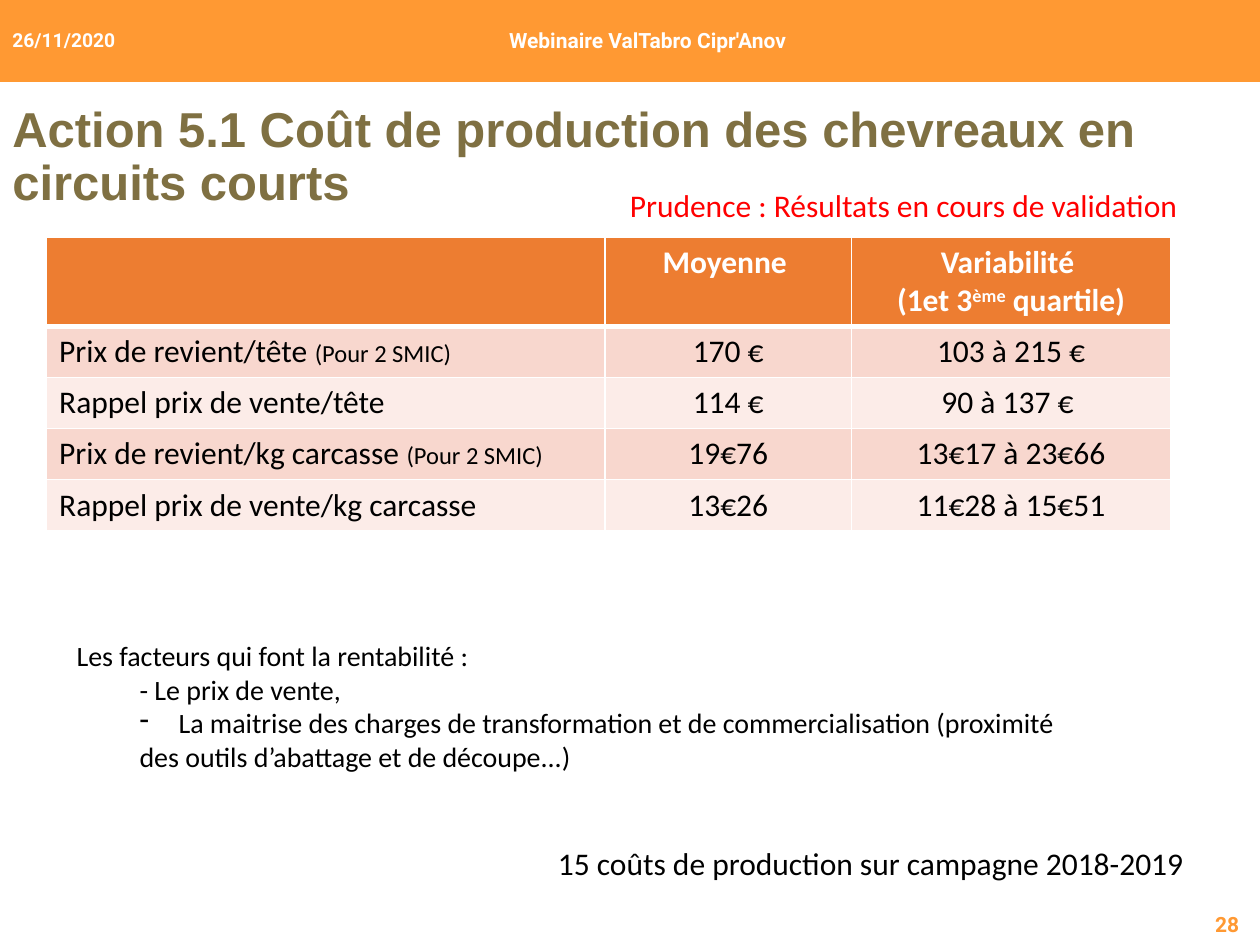
"""Build the slide on the production cost of kids sold through short circuits."""
from dataclasses import dataclass
from typing import Optional

from lxml.etree import SubElement
from pptx import Presentation
from pptx.dml.color import RGBColor
from pptx.enum.shapes import MSO_SHAPE as Shape
from pptx.enum.text import MSO_ANCHOR as Anchor, PP_ALIGN as Align
from pptx.oxml.ns import qn
from pptx.util import Inches, Pt

ORANGE = RGBColor(0xFF, 0x99, 0x33)
OLIVE = RGBColor(0x7F, 0x70, 0x42)
RED = RGBColor(0xFF, 0x00, 0x00)
BLACK = RGBColor(0x00, 0x00, 0x00)
WHITE = RGBColor(0xFF, 0xFF, 0xFF)
HEADER_FILL = RGBColor(0xED, 0x7D, 0x31)
BAND_FILLS = (RGBColor(0xF8, 0xD7, 0xCE), RGBColor(0xFC, 0xEC, 0xE8))


@dataclass(frozen=True)
class Piece:
    text: str
    size: Optional[float] = None
    superscript: bool = False


@dataclass(frozen=True)
class Line:
    pieces: tuple[Piece, ...]
    margin: float = 0
    indent: float = 0
    bullet: str = ""


@dataclass(frozen=True)
class Label:
    box: tuple[float, float, float, float]
    lines: tuple[Line, ...]
    size: float
    color: RGBColor = BLACK
    font: str = "Calibri"
    bold: bool = False
    align: Align = Align.LEFT
    anchor: Anchor = Anchor.TOP
    spacing: float = 1.0


def line(*texts, **layout) -> Line:
    """Make a line from plain strings and pieces."""
    return Line(tuple(Piece(t) if isinstance(t, str) else t for t in texts), **layout)


SMIC = Piece("(Pour 2 SMIC)", size=14)
LABELS = (
    Label((0, 0.53, 10, 1.45),
          (line("Action 5.1 Coût de production des chevreaux en circuits courts"),),
          28, OLIVE, "Arial", True, anchor=Anchor.MIDDLE, spacing=0.9),
    Label((1.37, 0, 7.54, 0.64), (line("Webinaire ValTabro Cipr'Anov"),),
          12, WHITE, "Roboto", True, Align.CENTER, Anchor.MIDDLE),
    Label((9.49, 7.17, 0.5, 0.33), (line("28"),),
          12, ORANGE, "Roboto", True, Align.CENTER, Anchor.MIDDLE),
    Label((0, 0, 1.37, 0.64), (line("26/11/2020"),),
          11, WHITE, "Roboto", True, anchor=Anchor.MIDDLE),
    Label((0.51, 5.02, 9.56, 1.18), (
        line("Les facteurs qui font la rentabilité :"),
        line("- Le prix de vente,", margin=0.5),
        line("La maitrise des charges de transformation et de commercialisation (proximité",
             margin=0.81, indent=-0.31, bullet="-"),
        line("des outils d’abattage et de découpe...)", margin=0.5),
    ), 16),
    Label((4.33, 6.65, 5.26, 0.4),
          (line("15 coûts de production sur campagne 2018-2019"),), 18),
    Label((4.9, 1.43, 5.71, 0.4),
          (line("Prudence : Résultats en cours de validation"),), 18, RED),
)
COLUMN_WIDTHS = (4.43, 1.96, 2.53)
HEADER_HEIGHT, ROW_HEIGHT = 0.7, 0.405
COSTS = (
    ((line(),), (line("Moyenne "),),
     (line("Variabilité "), line("(1et 3", Piece("ème", superscript=True), " quartile)"))),
    ((line("Prix de revient/tête ", SMIC),), (line("170 €"),), (line("103 à 215 €"),)),
    ((line("Rappel prix de vente/tête"),), (line("114 €"),), (line("90 à 137 € "),)),
    ((line("Prix de revient/kg carcasse ", SMIC),), (line("19€76"),),
     (line("13€17 à 23€66"),)),
    ((line("Rappel prix de vente/kg carcasse"),), (line("13€26"),),
     (line("11€28 à 15€51"),)),
)


def write(frame, lines: tuple[Line, ...], *, size: float, color: RGBColor,
          font: str = "Calibri", bold: bool = False, align: Align = Align.LEFT,
          spacing: float = 1.0) -> None:
    """Fill a text frame with formatted lines."""
    for index, content in enumerate(lines):
        paragraph = frame.add_paragraph() if index else frame.paragraphs[0]
        paragraph.alignment = align
        properties = paragraph._p.get_or_add_pPr()
        if content.margin:
            properties.set("marL", str(Inches(content.margin)))
            properties.set("indent", str(Inches(content.indent)))
        if content.bullet:
            SubElement(properties, qn("a:buChar")).set("char", content.bullet)
        paragraph.line_spacing = spacing
        paragraph.font.size = Pt(size)
        for piece in content.pieces:
            run = paragraph.add_run()
            run.text = piece.text
            run.font.name = font
            run.font.size = Pt(piece.size or size)
            run.font.bold = bold
            run.font.color.rgb = color
            if piece.superscript:
                run._r.get_or_add_rPr().set("baseline", "30000")


def draw_label(slide, label: Label) -> None:
    """Add a text box for a label."""
    frame = slide.shapes.add_textbox(*map(Inches, label.box)).text_frame
    frame.word_wrap = True
    frame.vertical_anchor = label.anchor
    write(frame, label.lines, size=label.size, color=label.color, font=label.font,
          bold=label.bold, align=label.align, spacing=label.spacing)


def set_borders(cell, top: float = 1, bottom: float = 1) -> None:
    """Give a cell white borders of the given widths in points."""
    properties = cell._tc.get_or_add_tcPr()
    for side, width in (("L", 1), ("R", 1), ("T", top), ("B", bottom)):
        border = SubElement(properties, qn(f"a:ln{side}"), w=str(Pt(width)))
        fill = SubElement(border, qn("a:solidFill"))
        SubElement(fill, qn("a:srgbClr"), val=str(WHITE))


def draw_costs(slide) -> None:
    """Add the table of costs with its header and banded rows."""
    height = HEADER_HEIGHT + ROW_HEIGHT * (len(COSTS) - 1)
    table = slide.shapes.add_table(
        len(COSTS), len(COLUMN_WIDTHS), Inches(0.37), Inches(1.88),
        Inches(sum(COLUMN_WIDTHS)), Inches(height)).table
    for column, width in zip(table.columns, COLUMN_WIDTHS):
        column.width = Inches(width)
    for r, entries in enumerate(COSTS):
        header = r == 0
        table.rows[r].height = Inches(HEADER_HEIGHT if header else ROW_HEIGHT)
        for c, lines in enumerate(entries):
            cell = table.cell(r, c)
            set_borders(cell, top=3 if r == 1 else 1, bottom=3 if header else 1)
            cell.fill.solid()
            cell.fill.fore_color.rgb = HEADER_FILL if header else BAND_FILLS[(r - 1) % 2]
            write(cell.text_frame, lines, size=18, color=WHITE if header else BLACK,
                  bold=header, align=Align.CENTER if c else Align.LEFT)


def main() -> None:
    """Build and save the slide."""
    deck = Presentation()
    deck.slide_width, deck.slide_height = Inches(10), Inches(7.5)
    slide = deck.slides.add_slide(deck.slide_layouts[6])
    banner = slide.shapes.add_shape(Shape.RECTANGLE, 0, 0, Inches(10), Inches(0.65))
    banner.shadow.inherit = False
    banner.fill.solid()
    banner.fill.fore_color.rgb = ORANGE
    banner.line.fill.background()
    draw_costs(slide)
    for label in LABELS:
        draw_label(slide, label)
    deck.save("out.pptx")


if __name__ == "__main__":
    main()
